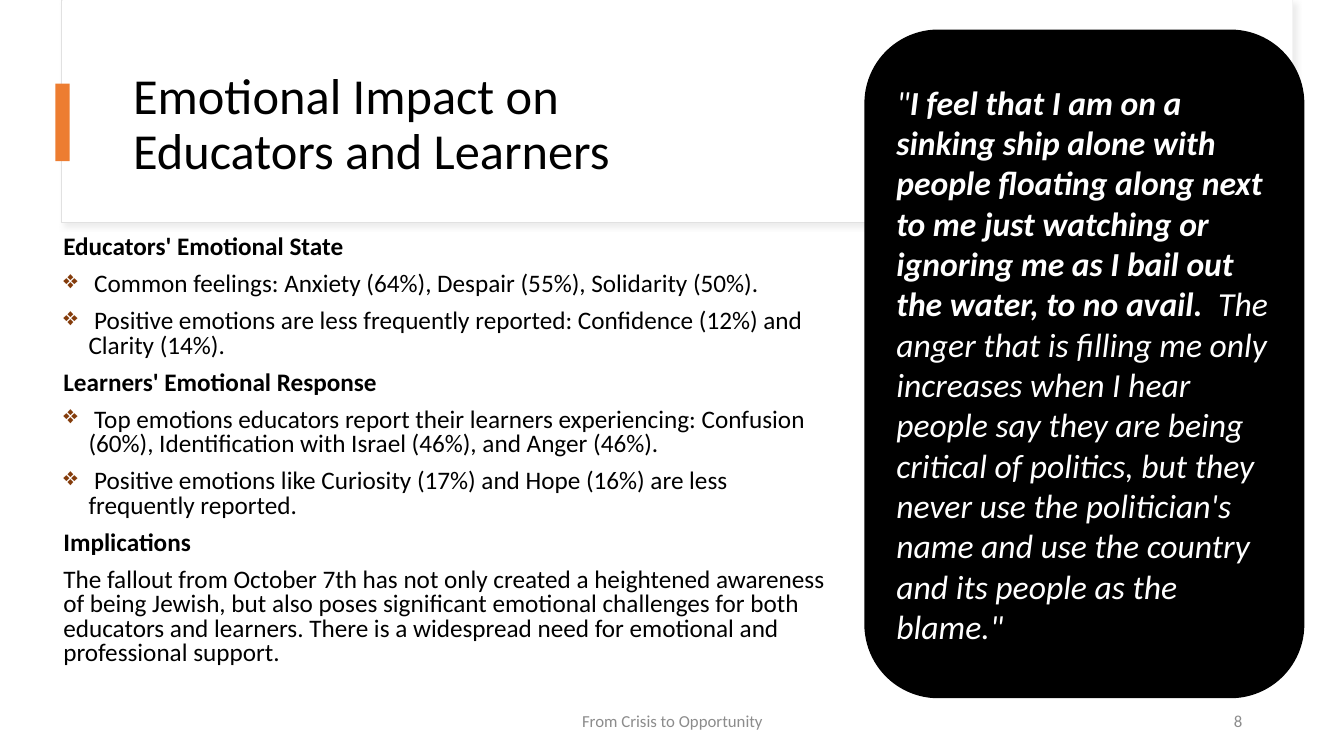
from dataclasses import dataclass

from lxml import etree
from pptx import Presentation
from pptx.dml.color import RGBColor
from pptx.enum.shapes import MSO_SHAPE
from pptx.enum.text import MSO_ANCHOR, MSO_AUTO_SIZE, PP_ALIGN
from pptx.oxml import parse_xml
from pptx.oxml.ns import nsdecls, qn
from pptx.util import Inches, Pt

RECTANGLE = MSO_SHAPE.RECTANGLE
ROUNDED = MSO_SHAPE.ROUNDED_RECTANGLE
TOP, MIDDLE = MSO_ANCHOR.TOP, MSO_ANCHOR.MIDDLE
LEFT, CENTER, RIGHT = PP_ALIGN.LEFT, PP_ALIGN.CENTER, PP_ALIGN.RIGHT
SHRINK = MSO_AUTO_SIZE.TEXT_TO_FIT_SHAPE
TITLE_ONLY = 5


@dataclass(frozen=True)
class Theme:
    font: str = "Calibri"
    white: str = "FFFFFF"
    black: str = "000000"
    border: str = "E1E1E1"
    shadow: str = "D9D9D9"
    accent: str = "ED7D31"
    bullet: str = "843C0B"
    muted: str = "8C8C8C"
    title_size: int = 36
    quote_size: int = 24
    body_size: int = 18
    footer_size: int = 12


THEME = Theme()

TITLE = "Emotional Impact on \vEducators and Learners"
SECTIONS = [
    ("Educators' Emotional State", True, [
        " Common feelings: Anxiety (64%), Despair (55%), Solidarity (50%).",
        " Positive emotions are less frequently reported: Confidence (12%) and Clarity (14%).",
    ]),
    ("Learners' Emotional Response", True, [
        " Top emotions educators report their learners experiencing: Confusion (60%), "
        "Identification with Israel (46%), and Anger (46%).",
        " Positive emotions like Curiosity (17%) and Hope (16%) are less frequently reported.",
    ]),
    ("Implications", False, [
        "The fallout from October 7th has not only created a heightened awareness of being "
        "Jewish, but also poses significant emotional challenges for both educators and "
        "learners. There is a widespread need for emotional and professional support.",
    ]),
]
QUOTE = [
    ('"', False),
    ("I feel that I am on a sinking ship alone with people floating along next to me just "
     "watching or ignoring me as I bail out the water, to no avail.  ", True),
    ("The anger that is filling me only increases when I hear people say they are being "
     "critical of politics, but they never use the politician's name and use the country "
     'and its people as the blame."', False),
]


def format_font(font, size, color, **values):
    values = {"name": THEME.font, "size": Pt(size), **values}
    for name, value in values.items():
        setattr(font, name, value)
    font.color.rgb = RGBColor.from_string(color)


def format_frame(frame, **values):
    for name, value in {"word_wrap": True, **values}.items():
        setattr(frame, name, value)


def add_block(slide, box, fill, line=None, width=1.0, kind=RECTANGLE):
    shape = slide.shapes.add_shape(kind, *map(Inches, box))
    shape.shadow.inherit = False
    shape.fill.solid()
    shape.fill.fore_color.rgb = RGBColor.from_string(fill)
    if line:
        shape.line.color.rgb = RGBColor.from_string(line)
        shape.line.width = Pt(width)
    else:
        shape.line.fill.background()
    return shape


def add_soft_shadow(shape):
    effects = shape.element.spPr.find(qn("a:effectLst"))
    effects.append(parse_xml(
        f'<a:outerShdw {nsdecls("a")} blurRad="{Pt(4)}" dist="{Pt(3)}" dir="2700000" '
        f'algn="tl" rotWithShape="0"><a:srgbClr val="{THEME.shadow}">'
        '<a:alpha val="50000"/></a:srgbClr></a:outerShdw>'))


def add_bullet(paragraph):
    properties = paragraph._p.get_or_add_pPr()
    properties.set("marL", str(Inches(0.25)))
    properties.set("indent", str(-Inches(0.25)))
    color = etree.SubElement(properties, qn("a:buClr"))
    etree.SubElement(color, qn("a:srgbClr"), val=THEME.bullet)
    etree.SubElement(properties, qn("a:buChar"), char="❖")


def add_header(slide, box):
    left, top, width, height = box
    # Card with a hairline border
    card = add_block(slide, box, THEME.white, THEME.border, 0.75)
    add_soft_shadow(card)
    add_block(slide, (left + 0.01, top, width - 0.01, height - 0.01), THEME.white)
    # Title, raised above the card
    title = slide.shapes.title
    slide.shapes._spTree.append(title.element)
    title_box = (left + 0.61, top + 0.6, width - 1.09, 1.29)
    for name, value in zip(("left", "top", "width", "height"), title_box):
        setattr(title, name, Inches(value))
    format_frame(title.text_frame, vertical_anchor=MIDDLE)
    title.text_frame.text = TITLE
    paragraph = title.text_frame.paragraphs[0]
    paragraph.alignment = LEFT
    paragraph.line_spacing = 0.9
    for run in paragraph.runs:
        format_font(run.font, THEME.title_size, THEME.black)
    # Accent bar
    add_block(slide, (left - 0.06, top + 0.83, 0.14, 0.77), THEME.accent)


def add_findings(slide, box):
    frame = slide.shapes.add_textbox(*map(Inches, box)).text_frame
    format_frame(frame, vertical_anchor=TOP, auto_size=SHRINK)
    lines = []
    for heading, bulleted, details in SECTIONS:
        lines.append((heading, True, False))
        lines += [(detail, False, bulleted) for detail in details]
    for index, (text, bold, bulleted) in enumerate(lines):
        paragraph = frame.add_paragraph() if index else frame.paragraphs[0]
        paragraph.line_spacing = 0.9
        paragraph.space_before = Pt(10)
        if bulleted:
            add_bullet(paragraph)
        run = paragraph.add_run()
        run.text = text
        format_font(run.font, THEME.body_size, THEME.black, bold=bold)


def add_footer_text(slide, box, text, alignment):
    frame = slide.shapes.add_textbox(*map(Inches, box)).text_frame
    format_frame(frame, vertical_anchor=MIDDLE)
    paragraph = frame.paragraphs[0]
    paragraph.alignment = alignment
    run = paragraph.add_run()
    run.text = text
    format_font(run.font, THEME.footer_size, THEME.muted)


def add_quote(slide, box):
    panel = add_block(slide, box, THEME.black, THEME.black, kind=ROUNDED)
    format_frame(panel.text_frame, vertical_anchor=MIDDLE)
    paragraph = panel.text_frame.paragraphs[0]
    paragraph.alignment = LEFT
    for text, bold in QUOTE:
        run = paragraph.add_run()
        run.text = text
        format_font(run.font, THEME.quote_size, THEME.white, bold=bold, italic=True)


def main():
    presentation = Presentation()
    presentation.slide_width = Inches(13.33)
    presentation.slide_height = Inches(7.5)
    slide = presentation.slides.add_slide(presentation.slide_layouts[TITLE_ONLY])
    add_header(slide, (0.61, 0, 12.21, 2.21))
    add_findings(slide, (0.53, 2.29, 7.9, 4.81))
    add_footer_text(slide, (9.42, 6.95, 3, 0.4), "8", RIGHT)
    add_footer_text(slide, (4.42, 6.95, 4.5, 0.4), "From Crisis to Opportunity", CENTER)
    add_quote(slide, (8.58, 0.3, 4.35, 6.62))
    presentation.save("out.pptx")


if __name__ == "__main__":
    main()
